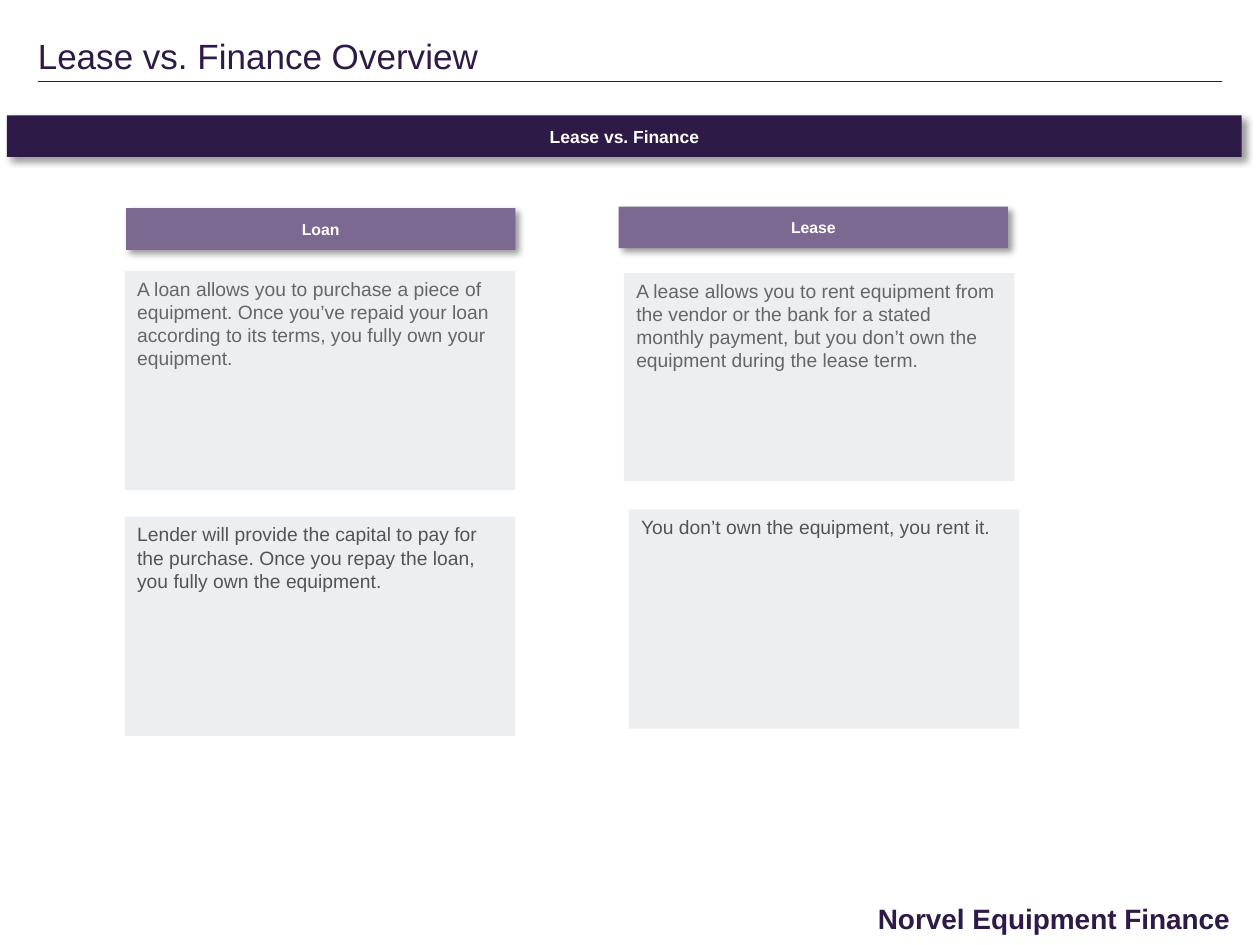
from dataclasses import dataclass

from lxml import etree
from pptx import Presentation
from pptx.dml.color import RGBColor
from pptx.enum import shapes, text
from pptx.oxml import ns
from pptx.util import Pt


@dataclass(frozen=True)
class Theme:
    font: str = "Arial"
    ink: str = "2E1A47"
    banner: str = "2D1A47"
    header: str = "7C6992"
    card: str = "EDEEEF"
    white: str = "FFFFFF"
    summary: str = "666666"
    detail: str = "545454"
    shadow: str = "000000"
    title_size: float = 20
    footer_size: float = 16
    banner_size: float = 10
    header_size: float = 9
    card_size: float = 11


@dataclass(frozen=True)
class Box:
    left: float
    top: float
    width: float
    height: float

    def inner(self, left, top, width, height):
        return Box(self.left + left, self.top + top, width, height)

    def lengths(self):
        return [Pt(v) for v in (self.left, self.top, self.width, self.height)]


THEME = Theme()


def write(tf, words, size, color, bold=False, align=text.PP_ALIGN.LEFT):
    tf.text = words
    p = tf.paragraphs[0]
    p.alignment = align
    font = p.runs[0].font
    font.name, font.size, font.bold = THEME.font, Pt(size), bold
    font.color.rgb = RGBColor.from_string(color)


def add_shadow(sp):
    effects = sp._element.spPr.find(ns.qn("a:effectLst"))
    outer = etree.SubElement(
        effects, ns.qn("a:outerShdw"), blurRad=str(Pt(4)), dist=str(Pt(3)),
        dir=str(45 * 60000), algn="tl", rotWithShape="0")
    color = etree.SubElement(outer, ns.qn("a:srgbClr"), val=THEME.shadow)
    etree.SubElement(color, ns.qn("a:alpha"), val="40000")


def add_panel(s, box, fill):
    sp = s.shapes.add_shape(shapes.MSO_SHAPE.RECTANGLE, *box.lengths())
    sp.shadow.inherit = False
    sp.fill.solid()
    sp.fill.fore_color.rgb = RGBColor.from_string(fill)
    sp.line.fill.background()
    sp.text_frame.word_wrap = True
    return sp


def add_bar(s, box, words, fill, size):
    sp = add_panel(s, box, fill)
    add_shadow(sp)
    sp.text_frame.vertical_anchor = text.MSO_ANCHOR.MIDDLE
    write(sp.text_frame, words, size, THEME.white, True, text.PP_ALIGN.CENTER)


def add_card(s, box, words, color):
    tf = add_panel(s, box, THEME.card).text_frame
    tf.vertical_anchor = text.MSO_ANCHOR.TOP
    write(tf, words, THEME.card_size, color)


def add_title(s, box, words):
    title = s.shapes.title
    title.left, title.top, title.width, title.height = box.inner(
        0, 0, box.width, 21.6).lengths()
    tf = title.text_frame
    tf.margin_left = tf.margin_right = tf.margin_top = tf.margin_bottom = 0
    tf.auto_size = text.MSO_AUTO_SIZE.NONE
    tf.vertical_anchor = text.MSO_ANCHOR.TOP
    write(tf, words, THEME.title_size, THEME.ink)
    tf.paragraphs[0].line_spacing = 0.9

    rule_y = Pt(box.top + box.height)
    rule = s.shapes.add_connector(
        shapes.MSO_CONNECTOR.STRAIGHT, Pt(box.left), rule_y,
        Pt(box.left + box.width), rule_y)
    rule.line.color.rgb = RGBColor.from_string(THEME.ink)
    rule.line.width = Pt(0.5)
    etree.SubElement(rule._element.spPr, ns.qn("a:effectLst"))


def add_column(s, box, heading, summary, detail, summary_box, detail_box):
    add_bar(s, box.inner(0, 0, box.width, 23.8), heading, THEME.header,
            THEME.header_size)
    add_card(s, box.inner(*summary_box), summary, THEME.summary)
    add_card(s, box.inner(*detail_box), detail, THEME.detail)


def add_footer(s, box, words):
    tf = s.shapes.add_textbox(*box.lengths()).text_frame
    tf.word_wrap = True
    write(tf, words, THEME.footer_size, THEME.ink, True)


def main():
    prs = Presentation()
    prs.slide_width, prs.slide_height = Pt(720), Pt(540)
    s = prs.slides.add_slide(prs.slide_layouts[5])

    add_title(s, Box(21.6, 22.3, 676.8, 24.5), "Lease vs. Finance Overview")
    add_bar(s, Box(4, 65.9, 705.6, 23.8), "Lease vs. Finance", THEME.banner,
            THEME.banner_size)
    add_column(
        s, Box(72, 119, 222.5, 302), "Loan",
        "A loan allows you to purchase a piece of equipment. Once you’ve "
        "repaid your loan according to its terms, you fully own your equipment.",
        "Lender will provide the capital to pay for the purchase. Once you "
        "repay the loan, you fully own the equipment.",
        (-0.7, 35.8, 223.2, 125.3), (-0.7, 176.2, 223.2, 125.3))
    add_column(
        s, Box(353.5, 118.1, 222.5, 298), "Lease",
        "A lease allows you to rent equipment from the vendor or the bank for "
        "a stated monthly payment, but you don’t own the equipment during the "
        "lease term.",
        "You don’t own the equipment, you rent it.",
        (3, 38, 223.2, 118.8), (5.8, 173, 223.2, 125.3))
    add_footer(s, Box(494.6, 511.9, 225.4, 26.6), "Norvel Equipment Finance")

    prs.save("out.pptx")


if __name__ == "__main__":
    main()
